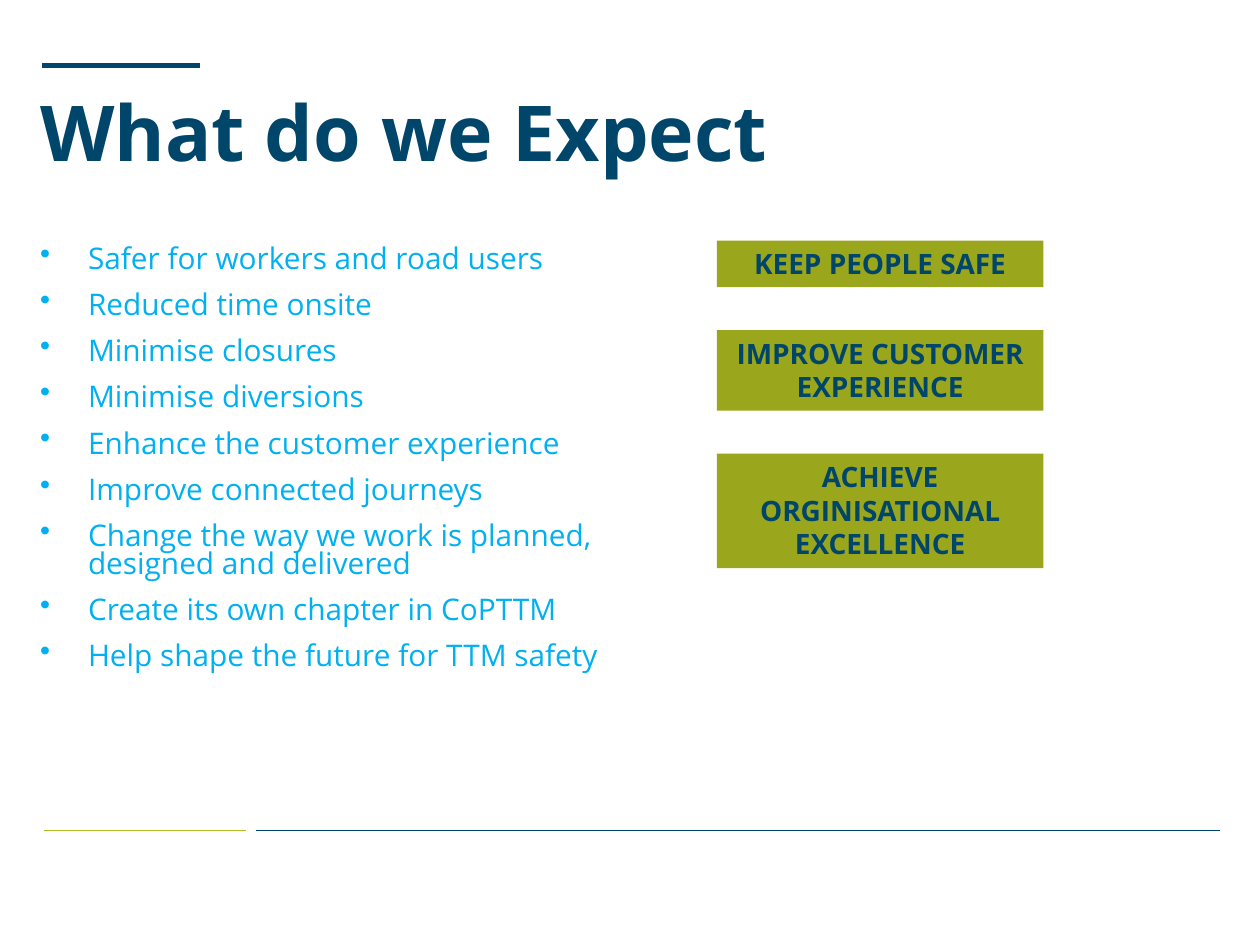
import dataclasses

import lxml.etree
import pptx
import pptx.dml.color
import pptx.enum.shapes
import pptx.enum.text
import pptx.oxml.ns
import pptx.util

Inches = pptx.util.Inches
Pt = pptx.util.Pt
Anchor = pptx.enum.text.MSO_ANCHOR
Align = pptx.enum.text.PP_ALIGN


@dataclasses.dataclass(frozen=True)
class Theme:
    font: str = "Open Sans"
    navy: str = "00456A"
    sky: str = "00B0F0"
    olive: str = "9AA71D"
    lime: str = "AFBD21"
    title_size: int = 44
    expectation_size: int = 17
    goal_size: int = 16


EXPECTATIONS = [
    "Safer for workers and road users",
    "Reduced time onsite",
    "Minimise closures",
    "Minimise diversions",
    "Enhance the customer experience",
    "Improve connected journeys",
    "Change the way we work is planned, designed and delivered",
    "Create its own chapter in CoPTTM",
    "Help shape the future for TTM safety",
]

# Each goal with the height of its box
GOALS = [
    ("KEEP PEOPLE SAFE", 0.37),
    ("IMPROVE CUSTOMER EXPERIENCE", 0.64),
    ("ACHIEVE ORGINISATIONAL EXCELLENCE", 0.91),
]
CONTENT_TOP = 1.91
GOAL_GAP = 0.34


def rgb(color):
    return pptx.dml.color.RGBColor.from_string(color)


def add_bullet(paragraph, indent):
    properties = paragraph._p.get_or_add_pPr()
    properties.set("marL", str(Inches(indent)))
    properties.set("indent", str(-Inches(indent)))
    bullet = lxml.etree.SubElement(properties, pptx.oxml.ns.qn("a:buChar"))
    bullet.set("char", "•")


def write_text(frame, lines, *, font, size, color, bold=False, align=Align.LEFT,
               anchor=Anchor.TOP, spacing=1.0, before=0, bullet_indent=None):
    frame.word_wrap = True
    frame.vertical_anchor = anchor
    for index, line in enumerate(lines):
        paragraph = frame.add_paragraph() if index else frame.paragraphs[0]
        paragraph.alignment = align
        paragraph.line_spacing = spacing
        paragraph.space_before = Pt(before if index else 0)
        if bullet_indent is not None:
            add_bullet(paragraph, bullet_indent)
        run = paragraph.add_run()
        run.text = line
        run.font.name = font
        run.font.size = Pt(size)
        run.font.bold = bold
        run.font.color.rgb = rgb(color)


class SlideBuilder:
    def __init__(self, slide, theme):
        self.slide = slide
        self.theme = theme

    def rule(self, left, right, y, color, weight):
        line = self.slide.shapes.add_connector(
            pptx.enum.shapes.MSO_CONNECTOR.STRAIGHT,
            Inches(left), Inches(y), Inches(right), Inches(y))
        line.line.color.rgb = rgb(color)
        line.line.width = Pt(weight)
        lxml.etree.SubElement(line._element.spPr, pptx.oxml.ns.qn("a:effectLst"))

    def text(self, left, top, width, height, lines, **style):
        box = self.slide.shapes.add_textbox(
            Inches(left), Inches(top), Inches(width), Inches(height))
        write_text(box.text_frame, lines, font=self.theme.font, **style)

    def goal(self, left, top, width, height, label):
        box = self.slide.shapes.add_shape(
            pptx.enum.shapes.MSO_SHAPE.RECTANGLE,
            Inches(left), Inches(top), Inches(width), Inches(height))
        box.shadow.inherit = False
        box.fill.solid()
        box.fill.fore_color.rgb = rgb(self.theme.olive)
        box.line.fill.background()
        write_text(box.text_frame, [label], font=self.theme.font,
                   size=self.theme.goal_size, color=self.theme.navy,
                   bold=True, align=Align.CENTER)
        box.text_frame.auto_size = pptx.enum.text.MSO_AUTO_SIZE.SHAPE_TO_FIT_TEXT


def main():
    theme = Theme()
    presentation = pptx.Presentation()
    presentation.slide_width = Inches(10)
    presentation.slide_height = Inches(7.5)
    slide = presentation.slides.add_slide(presentation.slide_layouts[6])
    builder = SlideBuilder(slide, theme)

    builder.rule(0.35, 1.95, 6.59, theme.lime, 0.75)
    builder.rule(2.03, 9.68, 6.59, theme.navy, 0.75)
    builder.rule(0.33, 1.59, 0.52, theme.navy, 3)

    builder.text(0.22, 0.52, 9.44, 0.94, ["What do we Expect"],
                 size=theme.title_size, color=theme.navy, bold=True,
                 anchor=Anchor.BOTTOM, spacing=0.9)
    builder.text(0.22, CONTENT_TOP, 4.89, 3.79, EXPECTATIONS,
                 size=theme.expectation_size, color=theme.sky,
                 spacing=0.8, before=10, bullet_indent=0.38)

    goal_top = CONTENT_TOP
    for label, height in GOALS:
        builder.goal(5.69, goal_top, 2.59, height, label)
        goal_top += height + GOAL_GAP

    presentation.save("out.pptx")


if __name__ == "__main__":
    main()
